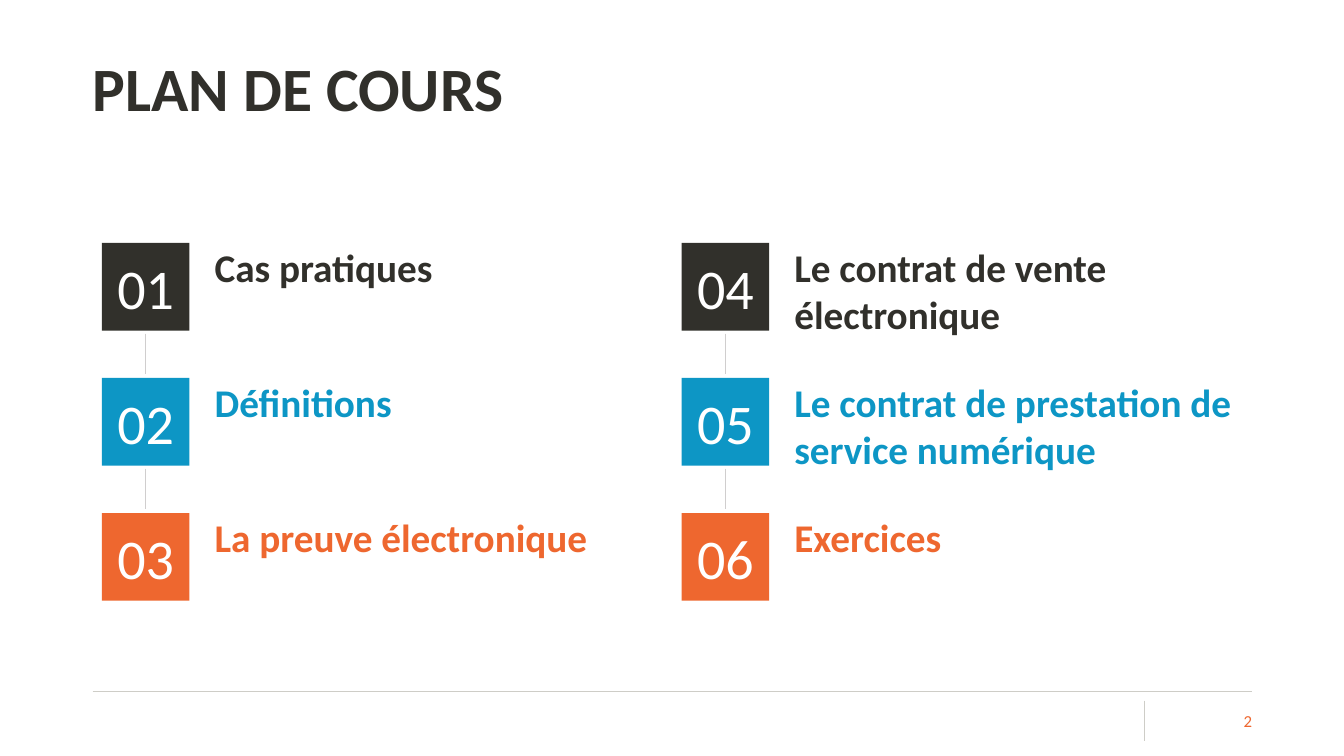
"""Build the course outline slide: six numbered topics in two columns."""
from dataclasses import dataclass

from lxml.etree import SubElement
from pptx import Presentation
from pptx.dml.color import RGBColor
from pptx.enum.shapes import MSO_CONNECTOR as Connector, MSO_SHAPE as Shape
from pptx.enum.text import MSO_ANCHOR as Anchor, MSO_AUTO_SIZE as AutoSize, PP_ALIGN as Align
from pptx.oxml.ns import qn
from pptx.util import Inches, Pt


@dataclass(frozen=True)
class Theme:
    font: str = "Calibri"
    dark: str = "31302B"
    blue: str = "0D96C5"
    orange: str = "EE672F"
    white: str = "FFFFFF"
    footer_line: str = "CECDC7"
    link_line: str = "D0CECE"
    title_size: int = 44
    number_size: int = 40
    topic_size: int = 28
    page_size: int = 12


theme = Theme()


def write(shape, text, size, color, bold=False, align=Align.LEFT, anchor=Anchor.TOP,
          insets=(0.1, 0.05, 0.1, 0.05)):
    """Put one formatted run into a shape."""
    frame = shape.text_frame
    frame.word_wrap = True
    frame.auto_size = AutoSize.NONE
    frame.vertical_anchor = anchor
    frame.margin_left, frame.margin_top, frame.margin_right, frame.margin_bottom = map(Inches, insets)
    paragraph = frame.paragraphs[0]
    paragraph.alignment = align
    run = paragraph.add_run()
    run.text = text
    run.font.name = theme.font
    run.font.size = Pt(size)
    run.font.bold = bold
    run.font.color.rgb = RGBColor.from_string(color)
    return paragraph


def draw_line(x1, y1, x2, y2, color):
    """Draw a thin straight line without a shadow."""
    line = slide.shapes.add_connector(Connector.STRAIGHT, *map(Inches, (x1, y1, x2, y2)))
    line.line.color.rgb = RGBColor.from_string(color)
    line.line.width = Pt(0.5)
    SubElement(line._element.spPr, qn("a:effectLst"))


presentation = Presentation()
presentation.slide_width = Inches(13.33)
presentation.slide_height = Inches(7.5)
slide = presentation.slides.add_slide(presentation.slide_layouts[5])

draw_line(0.92, 6.86, 12.42, 6.86, theme.footer_line)
draw_line(11.35, 6.95, 11.35, 7.35, theme.footer_line)

title = slide.shapes.title
title.left, title.top, title.width, title.height = map(Inches, (0.92, 0.18, 10.47, 1.45))
title_paragraph = write(title, "PLAN DE COURS", theme.title_size, theme.dark, bold=True,
                        anchor=Anchor.MIDDLE, insets=(0, 0.05, 0.1, 0.05))
title_paragraph.line_spacing = 0.9

topics = [
    "Cas pratiques",
    "Définitions",
    "La preuve électronique",
    "Le contrat de vente électronique",
    "Le contrat de prestation de service numérique",
    "Exercices",
]
row_colors = [theme.dark, theme.blue, theme.orange]
first_left, first_top = 1.01, 2.41
column_step, row_step = 5.75, 1.34
square_size = 0.87

for index, topic in enumerate(topics):
    column, row = divmod(index, len(row_colors))
    left = first_left + column * column_step
    top = first_top + row * row_step
    color = row_colors[row]

    topic_height = 0.94 if len(topic) > 25 else 0.47
    topic_box = slide.shapes.add_textbox(*map(Inches, (left + 1.02, top, 4.61, topic_height)))
    write(topic_box, topic, theme.topic_size, color, bold=True, insets=(0.1, 0, 0.1, 0))

    square = slide.shapes.add_shape(
        Shape.RECTANGLE, *map(Inches, (left, top, square_size, square_size)))
    square.shadow.inherit = False
    square.fill.solid()
    square.fill.fore_color.rgb = RGBColor.from_string(color)
    square.line.fill.background()
    write(square, f"{index + 1:02d}", theme.number_size, theme.white,
          align=Align.CENTER, anchor=Anchor.MIDDLE)

    if row < len(row_colors) - 1:
        center = left + 0.43
        draw_line(center, top + 0.9, center, top + 1.3, theme.link_line)

page_number = slide.shapes.add_textbox(*map(Inches, (11.47, 6.95, 0.95, 0.4)))
write(page_number, "2", theme.page_size, theme.orange, align=Align.RIGHT,
      anchor=Anchor.MIDDLE, insets=(0, 0.05, 0, 0.05))

presentation.save("out.pptx")
